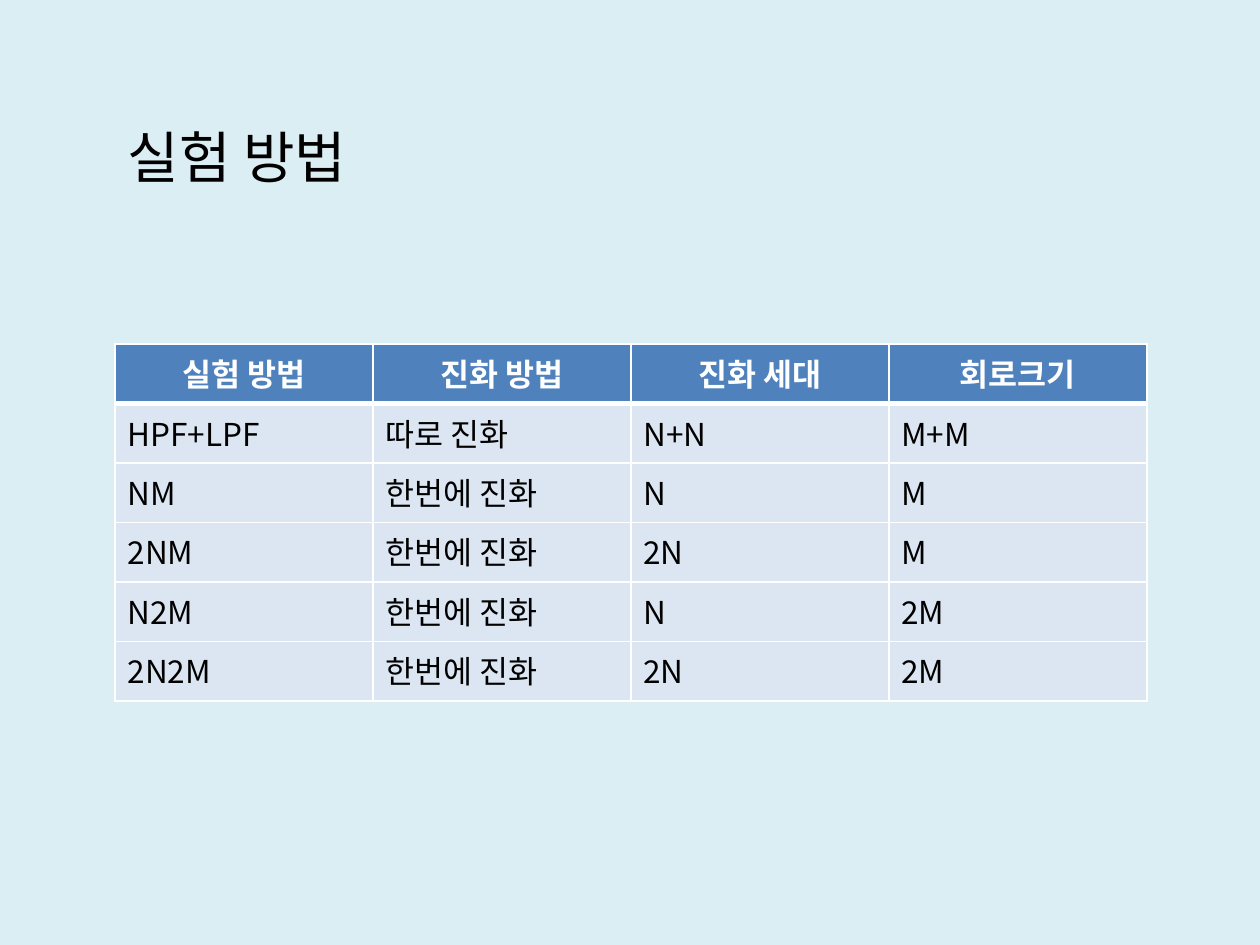
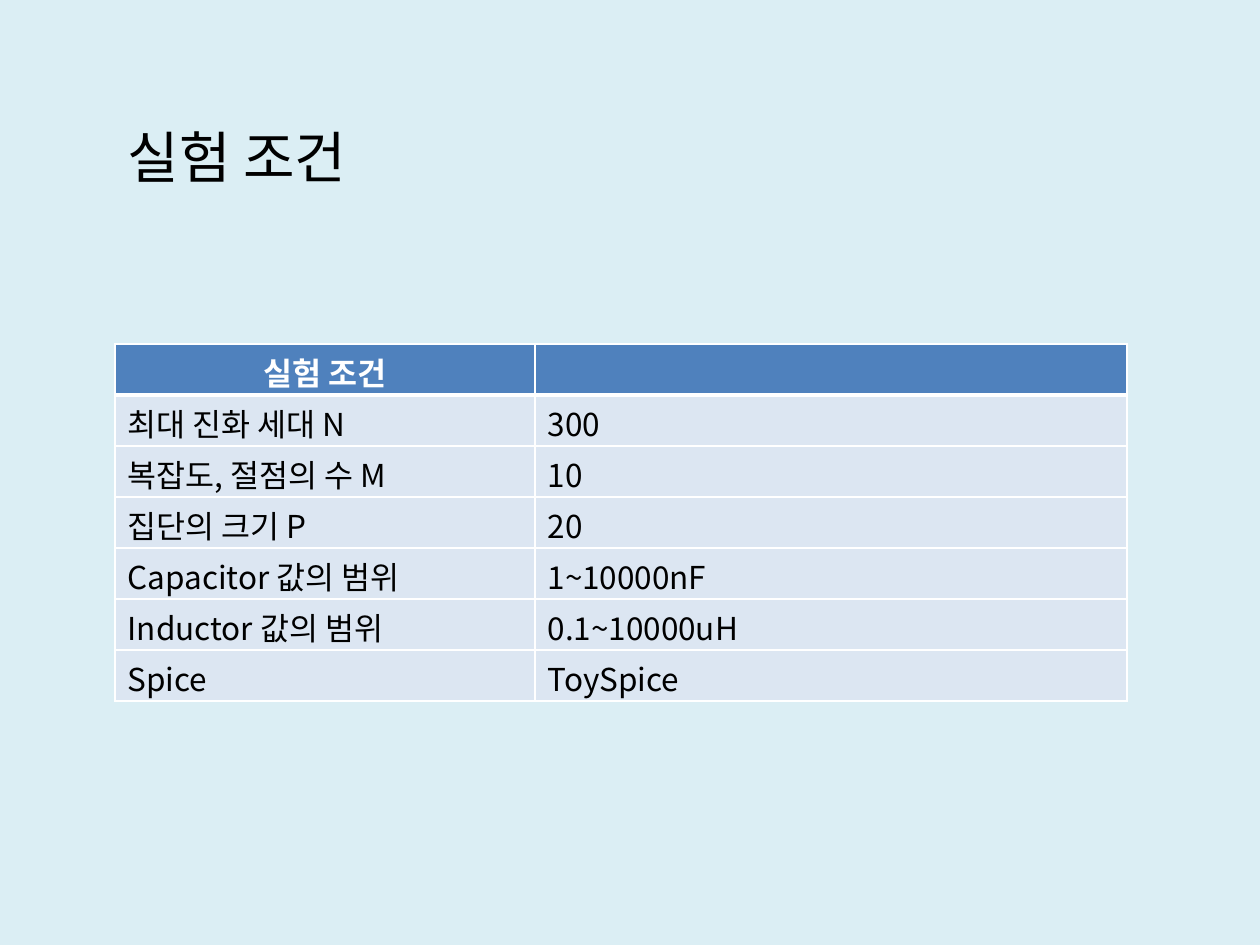
from lxml import etree
from pptx import Presentation
from pptx import util as u
from pptx.dml.color import RGBColor
from pptx.enum import text
from pptx.oxml.ns import qn

FONT = "Noto Sans CJK KR"
SKY, BLUE, PALE = "DBEEF4", "4F81BD", "DCE6F2"
WHITE, BLACK = "FFFFFF", "000000"
LEFT, TITLE_TOP, TITLE_H = 115, 116, 81
GRID_TOP, GRID_H = 344, 357

METHODS = [
    ["실험 방법", "진화 방법", "진화 세대", "회로크기"],
    ["HPF+LPF", "따로 진화", "N+N", "M+M"],
    ["NM", "한번에 진화", "N", "M"],
    ["2NM", "한번에 진화", "2N", "M"],
    ["N2M", "한번에 진화", "N", "2M"],
    ["2N2M", "한번에 진화", "2N", "2M"],
]
SETUP = [
    ["실험 조건", ""],
    ["최대 진화 세대 N", "300"],
    ["복잡도, 절점의 수 M", "10"],
    ["집단의 크기 P", "20"],
    ["Capacitor 값의 범위", "1~10000nF"],
    ["Inductor 값의 범위", "0.1~10000uH"],
    ["Spice", "ToySpice"],
]


def px(n):
    return u.Emu(round(n * 914400 / 126))


def color(code):
    return RGBColor.from_string(code)


def paint(fill, code):
    fill.solid()
    fill.fore_color.rgb = color(code)


def style(para, size, code, bold=False, center=False):
    """Format a paragraph, with the same font for Latin and Korean."""
    font = para.font
    font.size, font.bold, font.name = u.Pt(size), bold, FONT
    font.color.rgb = color(code)
    para.alignment = text.PP_ALIGN.CENTER if center else text.PP_ALIGN.LEFT
    props = para._p.get_or_add_pPr().find(qn("a:defRPr"))
    etree.SubElement(props, qn("a:ea"), typeface=FONT)


def add_edges(cell, top, bottom):
    """Draw white cell borders; top and bottom are widths in points."""
    props = cell._tc.get_or_add_tcPr()
    edges = [("lnL", 1), ("lnR", 1), ("lnT", top), ("lnB", bottom)]
    for spot, (tag, width) in enumerate(edges):
        line = etree.Element(qn("a:" + tag), w=str(u.Pt(width)))
        fill = etree.SubElement(line, qn("a:solidFill"))
        etree.SubElement(fill, qn("a:srgbClr"), val=WHITE)
        props.insert(spot, line)


def add_title(slide, words, width):
    title = slide.shapes.title
    title.left, title.top = px(LEFT), px(TITLE_TOP)
    title.width, title.height = px(width), px(TITLE_H)
    frame = title.text_frame
    frame.text = words
    frame.auto_size = text.MSO_AUTO_SIZE.NONE
    frame.vertical_anchor = text.MSO_ANCHOR.TOP
    style(frame.paragraphs[0], 32, BLACK)


def fill_cell(cell, words, row, pad):
    head = row == 0
    cell.text = words
    cell.margin_top, cell.margin_bottom = px(pad[0]), px(pad[1])
    style(cell.text_frame.paragraphs[0], 18, WHITE if head else BLACK,
          bold=head, center=head)
    paint(cell.fill, BLUE if head else PALE)
    add_edges(cell, 3 if row == 1 else 1, 3 if head else 1)


def add_grid(slide, rows, widths, pad):
    """Add a table; pad is the top and bottom cell margin in px."""
    frame = slide.shapes.add_table(len(rows), len(widths), px(LEFT),
                                   px(GRID_TOP), px(sum(widths)), px(GRID_H))
    table = frame.table
    for col, width in zip(table.columns, widths):
        col.width = px(width)
    for r, row in enumerate(rows):
        for c, words in enumerate(row):
            fill_cell(table.cell(r, c), words, r, pad)


def add_page(deck, title, width, rows, widths, pad):
    slide = deck.slides.add_slide(deck.slide_layouts[5])
    add_title(slide, title, width)
    add_grid(slide, rows, widths, pad)


def main():
    deck = Presentation()
    deck.slide_width, deck.slide_height = px(1260), px(945)
    paint(deck.slide_master.background.fill, SKY)
    add_page(deck, "실험 방법", 689, METHODS, [258] * 4, (6, 6))
    add_page(deck, "실험 조건", 581, SETUP, [420, 592], (5, 0))
    deck.save("out.pptx")


if __name__ == "__main__":
    main()
